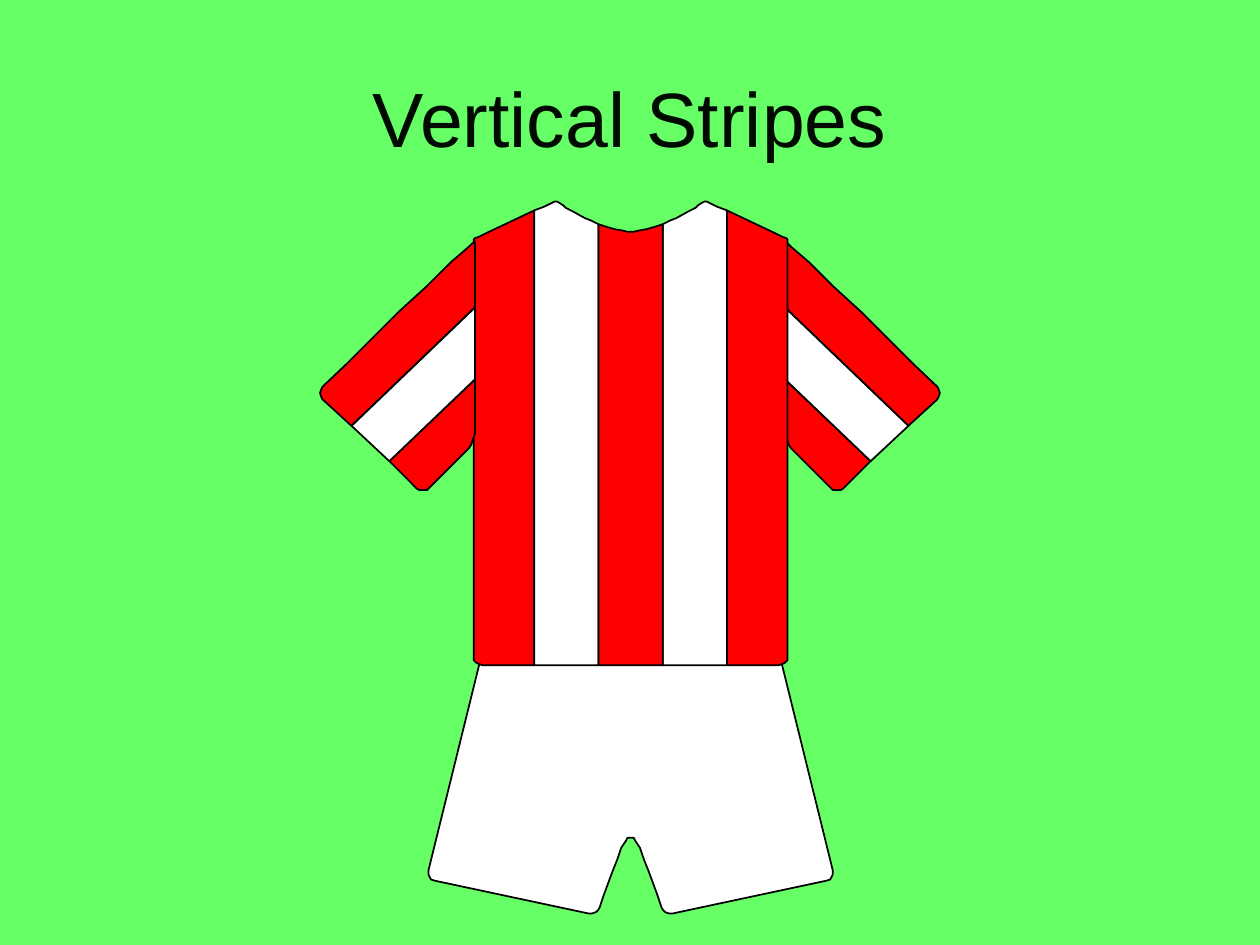
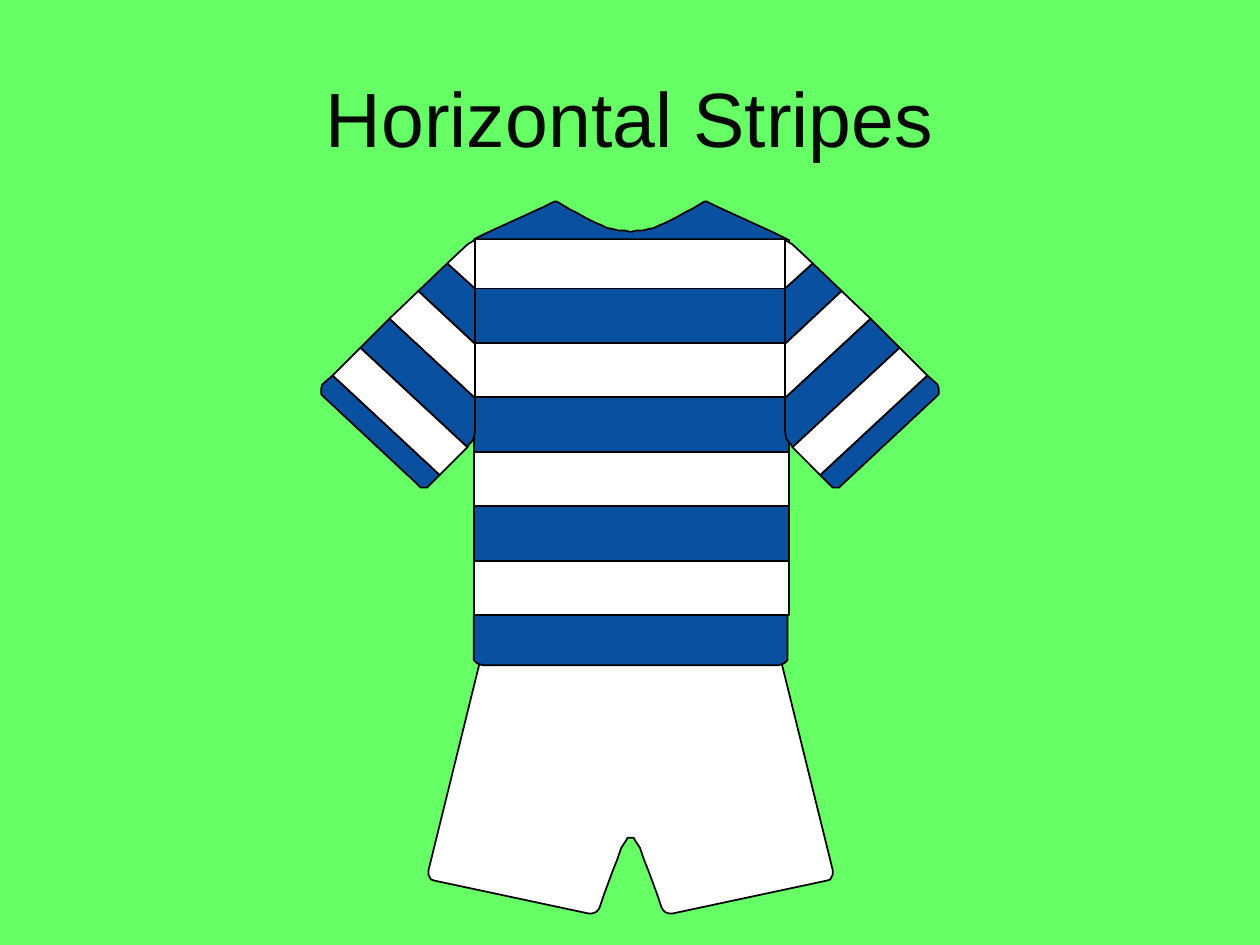
from dataclasses import dataclass

from pptx import Presentation
from pptx.dml.color import RGBColor
from pptx.enum.shapes import MSO_SHAPE
from pptx.enum.text import MSO_ANCHOR, PP_ALIGN
from pptx.util import Pt

RECTANGLE = MSO_SHAPE.RECTANGLE
MIDDLE = MSO_ANCHOR.MIDDLE
CENTER = PP_ALIGN.CENTER
TITLE_ONLY = 5
UNIT = Pt(0.72)
SLEEVE_MIRROR = 1000
KIT_MIRROR = 1001


@dataclass(frozen=True)
class Theme:
    grass: str = "66FF66"
    ink: str = "000A00"
    outline: str = "000000"
    white: str = "FFFFFF"
    red: str = "FF0000"
    blue: str = "0A50A1"
    font: str = "Arial"
    title_size: float = 44
    line_width: float = 1


def mirrored(points, total):
    return [(total - x, y) for x, y in points]


def symmetric(half):
    return half + mirrored(half, KIT_MIRROR)[::-1]


SHORTS = symmetric([
    (388, 522), (385, 523), (383, 524), (381, 526), (380, 529),
    (340, 691), (340, 694), (341, 696), (342, 698), (345, 699),
    (467, 725), (470, 725), (473, 724), (475, 722), (476, 720),
    (479, 711), (486, 692), (490, 682), (493, 673), (495, 670),
    (497, 667), (498, 665), (499, 665),
])

SIDE_STRIPE = [
    (424, 167), (386, 185), (380, 188), (377, 189), (376, 190), (376, 521),
    (376, 524), (378, 526), (380, 527), (383, 528), (424, 528),
]
SHOULDER_STRIPE = [
    (447, 163), (444, 161), (442, 160), (440, 160), (432, 164), (424, 167),
    (424, 528), (475, 528), (475, 178), (469, 175), (464, 173), (455, 168),
    (449, 165),
]
CENTRE_STRIPE = symmetric([
    (475, 528), (475, 178), (481, 180), (488, 182), (494, 183), (498, 184),
])
LONG_SLEEVE_STRIPES = [
    ([(623, 344), (624, 347), (625, 350), (626, 353), (628, 356), (659, 387),
      (661, 389), (664, 389), (667, 389), (669, 388), (691, 366),
      (623, 301)], "red"),
    ([(744, 317), (745, 315), (746, 312), (745, 309), (744, 307), (725, 289),
      (684, 248), (661, 227), (642, 208), (628, 196), (625, 193), (623, 192),
      (623, 244), (721, 338)], "red"),
    ([(623, 244), (623, 301), (691, 366), (721, 338)], "white"),
]

YOKE = symmetric([
    (376, 190), (380, 188), (386, 185), (432, 164), (440, 160), (442, 160),
    (447, 163), (452, 166), (458, 169), (465, 173), (473, 177), (478, 179),
    (482, 181), (487, 182), (491, 183), (496, 183), (500, 184),
])
HEM = symmetric([
    (376, 488), (376, 521), (376, 524), (378, 526), (380, 527), (383, 528),
])
HOOP_EDGES = [190] + [229 + 43.2 * step for step in range(7)]
CROSS_SLEEVE_STRIPES = [
    ([(645, 209), (623, 229), (623, 273), (668, 231)], "blue"),
    ([(668, 231), (623, 273), (623, 316), (691, 253)], "white"),
    ([(623, 190), (623, 229), (645, 209), (629, 194), (624, 191)], "white"),
    ([(736, 298), (651, 377), (659, 385), (661, 387), (664, 387), (666, 387),
      (668, 385), (743, 315), (745, 313), (745, 310), (745, 308),
      (744, 305)], "blue"),
    ([(691, 253), (623, 316), (623, 342), (624, 348), (626, 351), (628, 353),
      (629, 355), (714, 276)], "blue"),
    ([(714, 276), (629, 355), (651, 377), (736, 298)], "white"),
]


class KitDeck:
    def __init__(self, theme):
        self.theme = theme
        self.deck = Presentation()
        self.deck.slide_width, self.deck.slide_height = Pt(720), Pt(540)
        self.kit = None

    def colour(self, name):
        return RGBColor.from_string(getattr(self.theme, name))

    def start_page(self, title):
        page = self.deck.slides.add_slide(self.deck.slide_layouts[TITLE_ONLY])
        page.background.fill.solid()
        page.background.fill.fore_color.rgb = self.colour("grass")
        self.format_title(page.shapes.title, title)
        self.kit = page.shapes.add_group_shape().shapes
        self.outline(SHORTS, "white")

    def format_title(self, box, text):
        box.left, box.top, box.width, box.height = Pt(36), Pt(21.6), Pt(648), Pt(90)
        frame = box.text_frame
        frame.text = text
        frame.word_wrap = True
        frame.vertical_anchor = MIDDLE
        para = frame.paragraphs[0]
        para.alignment = CENTER
        font = para.runs[0].font
        font.name = self.theme.font
        font.size = Pt(self.theme.title_size)
        font.color.rgb = self.colour("ink")

    def paint(self, shape, fill):
        shape.shadow.inherit = False
        shape.fill.solid()
        shape.fill.fore_color.rgb = self.colour(fill)
        shape.line.color.rgb = self.colour("outline")
        shape.line.width = Pt(self.theme.line_width)

    def outline(self, points, fill):
        builder = self.kit.build_freeform(*points[0], scale=UNIT)
        builder.add_line_segments(points[1:], close=True)
        self.paint(builder.convert_to_shape(), fill)

    def hoop(self, top, bottom, fill):
        shape = self.kit.add_shape(
            RECTANGLE, Pt(270.72), Pt(top * 0.72), Pt(180), Pt((bottom - top) * 0.72))
        self.paint(shape, fill)

    def sleeve(self, stripes, left=False):
        for points, fill in stripes:
            self.outline(mirrored(points, SLEEVE_MIRROR) if left else points, fill)


def draw_vertical_kit(book):
    book.start_page("Vertical Stripes")
    book.sleeve(LONG_SLEEVE_STRIPES)
    for stripe, fill in ((SIDE_STRIPE, "red"), (SHOULDER_STRIPE, "white")):
        book.outline(stripe, fill)
        book.outline(mirrored(stripe, KIT_MIRROR), fill)
    book.outline(CENTRE_STRIPE, "red")
    book.sleeve(LONG_SLEEVE_STRIPES, left=True)


def draw_horizontal_kit(book):
    book.start_page("Horizontal Stripes")
    book.outline(YOKE, "blue")
    book.outline(HEM, "blue")
    for index, (top, bottom) in enumerate(zip(HOOP_EDGES, HOOP_EDGES[1:])):
        book.hoop(top, bottom, "blue" if index % 2 else "white")
    book.sleeve(CROSS_SLEEVE_STRIPES)
    book.sleeve(CROSS_SLEEVE_STRIPES, left=True)


def main():
    book = KitDeck(Theme())
    draw_vertical_kit(book)
    draw_horizontal_kit(book)
    book.deck.save("out.pptx")


if __name__ == "__main__":
    main()
